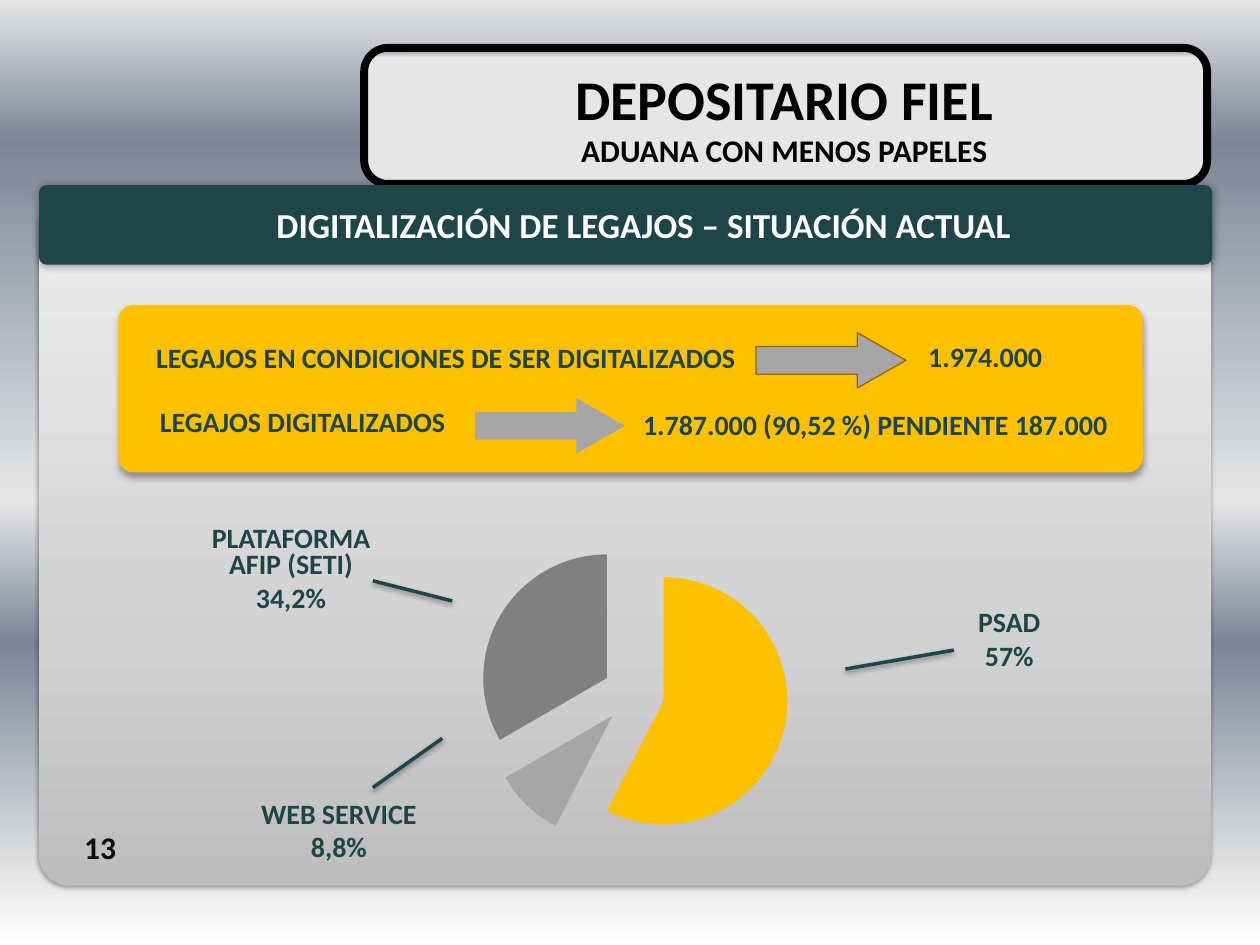
from lxml.etree import SubElement
from pptx import Presentation
from pptx.chart.data import CategoryChartData
from pptx.dml.color import RGBColor
from pptx.enum.chart import XL_CHART_TYPE
from pptx.enum.shapes import MSO_CONNECTOR, MSO_SHAPE
from pptx.enum.text import MSO_ANCHOR, MSO_AUTO_SIZE, PP_ALIGN
from pptx.oxml.ns import qn
from pptx.util import Inches, Pt

COLORS = {"teal": "1E4649", "gold": "FFC000", "silver": "A6A6A6", "gray": "808080",
          "brown": "996600", "black": "000000", "white": "FFFFFF", "ink": "0D0D0D",
          "pale": "E6E6E6", "slate": "7D8496", "panel_low": "BDBDBD",
          "panel_mid": "D1D1D1", "panel_top": "EEEEEE"}
COLS, ROWS, CELL = 100, 75, Inches(0.1)
FONT = "Calibri"
SOFT = (38, 3.1, 1.6, 90)


def rgb(name):
    """Return the colour stored under a name."""
    return RGBColor.from_string(COLORS[name])


def cells(box, x, y, w=0, h=0):
    """Turn grid cells relative to a box into slide lengths."""
    return [round(v * CELL) for v in (box[0] + x, box[1] + y, w, h)]


def gradient(fill, element, stops, angle):
    """Give a fill a linear gradient with any number of stops."""
    fill.gradient()
    grad = element.find(".//" + qn("a:gradFill"))
    for child in list(grad):
        grad.remove(child)
    gs_list = SubElement(grad, qn("a:gsLst"))
    for pos, name in stops:
        gs = SubElement(gs_list, qn("a:gs"), pos=str(pos * 1000))
        SubElement(gs, qn("a:srgbClr"), val=COLORS[name])
    SubElement(grad, qn("a:lin"), ang=str(angle * 60000), scaled="0")


def set_shadow(shape, shadow=None):
    """Replace the theme shadow by (opacity, blur, distance, direction) or none."""
    effects = SubElement(shape.element.spPr, qn("a:effectLst"))
    if shadow:
        alpha, blur, dist, angle = shadow
        outer = SubElement(effects, qn("a:outerShdw"), blurRad=str(Pt(blur)),
                           dist=str(Pt(dist)), dir=str(angle * 60000), rotWithShape="0")
        color = SubElement(outer, qn("a:srgbClr"), val=COLORS["black"])
        SubElement(color, qn("a:alpha"), val=str(alpha * 1000))


def add_block(s, kind, place, adj, fill, line=None, width=0, shadow=None):
    """Add a preset shape; fill is a colour name or (stops, angle)."""
    sp = s.shapes.add_shape(kind, *place)
    for i, value in enumerate(adj):
        sp.adjustments[i] = value
    if isinstance(fill, str):
        sp.fill.solid()
        sp.fill.fore_color.rgb = rgb(fill)
    else:
        gradient(sp.fill, sp.element, *fill)
    if line:
        sp.line.color.rgb = rgb(line)
        sp.line.width = Pt(width)
    else:
        sp.line.fill.background()
    set_shadow(sp, shadow)
    return sp


def write(sp, lines, sizes, color="teal", align=PP_ALIGN.LEFT, spacing=None,
          anchor=MSO_ANCHOR.TOP):
    """Fill a shape with bold lines; spacing applies to the first one."""
    tf = sp.text_frame
    tf.word_wrap = True
    tf.vertical_anchor = anchor
    tf.text = "\n".join(lines)
    for p, size in zip(tf.paragraphs, sizes):
        p.alignment = align
        for r in p.runs:
            r.font.name, r.font.size, r.font.bold = FONT, Pt(size), True
            r.font.color.rgb = rgb(color)
    if spacing:
        tf.paragraphs[0].line_spacing = Pt(spacing)


def add_text(s, place, lines, size=16, **style):
    """Add a text box with lines of one size."""
    write(s.shapes.add_textbox(*place), lines, [size] * len(lines), **style)


def add_backdrop(s, box):
    """Paint the background and the large panel."""
    sky = [(0, "white"), (7, "pale"), (32, "slate"), (47, "pale"), (85, "slate"), (100, "pale")]
    gradient(s.background.fill, s.element, sky, 270)
    panel = [(0, "panel_low"), (35, "panel_mid"), (100, "panel_top")]
    add_block(s, MSO_SHAPE.ROUNDED_RECTANGLE, cells(box, 0, 0, *box[2:]), [0.044],
              (panel, 270), shadow=SOFT)


def add_heading(s, box):
    """Place the framed title and subtitle."""
    stops = [(0, "slate"), (7, "pale"), (100, "pale")]
    add_block(s, MSO_SHAPE.ROUNDED_RECTANGLE, cells(box, 0, 0, *box[2:]), [0.174],
              (stops, 90), "black", 4.5)
    title = s.shapes.title
    title.left, title.top, title.width, title.height = cells(box, 8.1, 0.8, 50.5, 9.4)
    write(title, ["DEPOSITARIO FIEL", "ADUANA CON MENOS PAPELES"], [32, 18], "black",
          PP_ALIGN.CENTER)
    title.text_frame.auto_size = MSO_AUTO_SIZE.SHAPE_TO_FIT_TEXT
    title.element.getparent().append(title.element)


def add_banner(s, box):
    """Place the section banner."""
    sp = add_block(s, MSO_SHAPE.ROUNDED_RECTANGLE, cells(box, 0, 0, *box[2:]), [0.091],
                   "teal", shadow=(40, 5, 0, 0))
    write(sp, ["DIGITALIZACIÓN DE LEGAJOS – SITUACIÓN ACTUAL"], [20], "white",
          PP_ALIGN.CENTER, anchor=MSO_ANCHOR.MIDDLE)
    sp.text_frame.paragraphs[0]._p.get_or_add_pPr().set("marL", str(Inches(0.29)))


def add_totals(s, box):
    """Place the gold box with two label, arrow and figure rows."""
    add_block(s, MSO_SHAPE.ROUNDED_RECTANGLE, cells(box, 0, 0, *box[2:]), [0.09], "gold",
              shadow=(32, 3.5, 2.2, 90))
    rows = [
        ("LEGAJOS EN CONDICIONES DE SER DIGITALIZADOS", (2, 2.3, 50.2, 3.5), (50.6, 2.2),
         "brown", "1.974.000", (49.6, 2.8, 24.7, 3.2), 15),
        ("LEGAJOS DIGITALIZADOS", (2.3, 7.4, 33.4, 3.5), (28.3, 7.4),
         None, "1.787.000 (90,52 %) PENDIENTE 187.000", (32.9, 7.7, 46.6, 5.8), 19),
    ]
    for label, label_at, arrow_at, line, figure, figure_at, spacing in rows:
        add_block(s, MSO_SHAPE.RIGHT_ARROW, cells(box, *arrow_at, 11.9, 4.4), [0.5, 0.878],
                  "silver", line, 0.75)
        add_text(s, cells(box, *label_at), [label])
        add_text(s, cells(box, *figure_at), [figure], align=PP_ALIGN.RIGHT, spacing=spacing)


def add_pie(s, box):
    """Place the exploded pie."""
    data = CategoryChartData()
    data.categories = ["1", "2", "3"]
    data.add_series("Series 1", [57, 9, 33])
    chart = s.shapes.add_chart(XL_CHART_TYPE.PIE, *cells(box, 7.7, 0, 57, 27.3), data).chart
    chart.has_legend = chart.has_title = False
    chart.font.name, chart.font.size = FONT, Pt(10)
    chart.font.color.rgb = rgb("black")
    plot = chart.plots[0]
    plot.vary_by_categories = True
    series = plot.series[0]
    for i, name in enumerate(("gold", "silver", "gray")):
        fill = series.points[i].format.fill
        fill.solid()
        fill.fore_color.rgb = rgb(name)
    explosion = SubElement(series._element, qn("c:explosion"), val="25")
    series._element.find(qn("c:dPt")).addprevious(explosion)


def add_channels(s, box):
    """Place the pie with its labels and leader lines."""
    add_pie(s, box)
    channels = [
        ("PSAD", "57%", (60.9, 6.7, 10.2, 5.8), (61.6, 10.2), (53, 11.7)),
        ("PLATAFORMA AFIP (SETI)", "34,2%", (0, 0, 18, 7.9), (15.5, 4.7), (21.8, 6.3)),
        ("WEB SERVICE", "8,8%", (4.6, 21.9, 16.4, 5.8), (15.5, 21.1), (21, 17.2)),
    ]
    for name, share, place, start, end in channels:
        add_text(s, cells(box, *place), [name, share], align=PP_ALIGN.CENTER, spacing=15)
        leader = s.shapes.add_connector(MSO_CONNECTOR.STRAIGHT, *cells(box, *start)[:2],
                                        *cells(box, *end)[:2])
        leader.line.color.rgb = rgb("teal")
        leader.line.width = Pt(2)
        set_shadow(leader, SOFT)


def main():
    """Build and save the slide."""
    prs = Presentation()
    prs.slide_width, prs.slide_height = COLS * CELL, ROWS * CELL
    s = prs.slides.add_slide(prs.slide_layouts[5])
    add_backdrop(s, (3.1, 15.6, 93, 54.7))
    add_heading(s, (28.9, 3.8, 66.9, 10.8))
    add_banner(s, (3.1, 14.7, 93.1, 6.3))
    add_totals(s, (9.4, 24.2, 81.3, 13.3))
    add_channels(s, (14.1, 41.4, 71.1, 27.7))
    add_text(s, cells((4.7, 64.8), 0, 0, 5.5, 4.8), ["13"], 18, color="ink",
             align=PP_ALIGN.RIGHT, anchor=MSO_ANCHOR.MIDDLE)
    prs.save("out.pptx")


if __name__ == "__main__":
    main()
